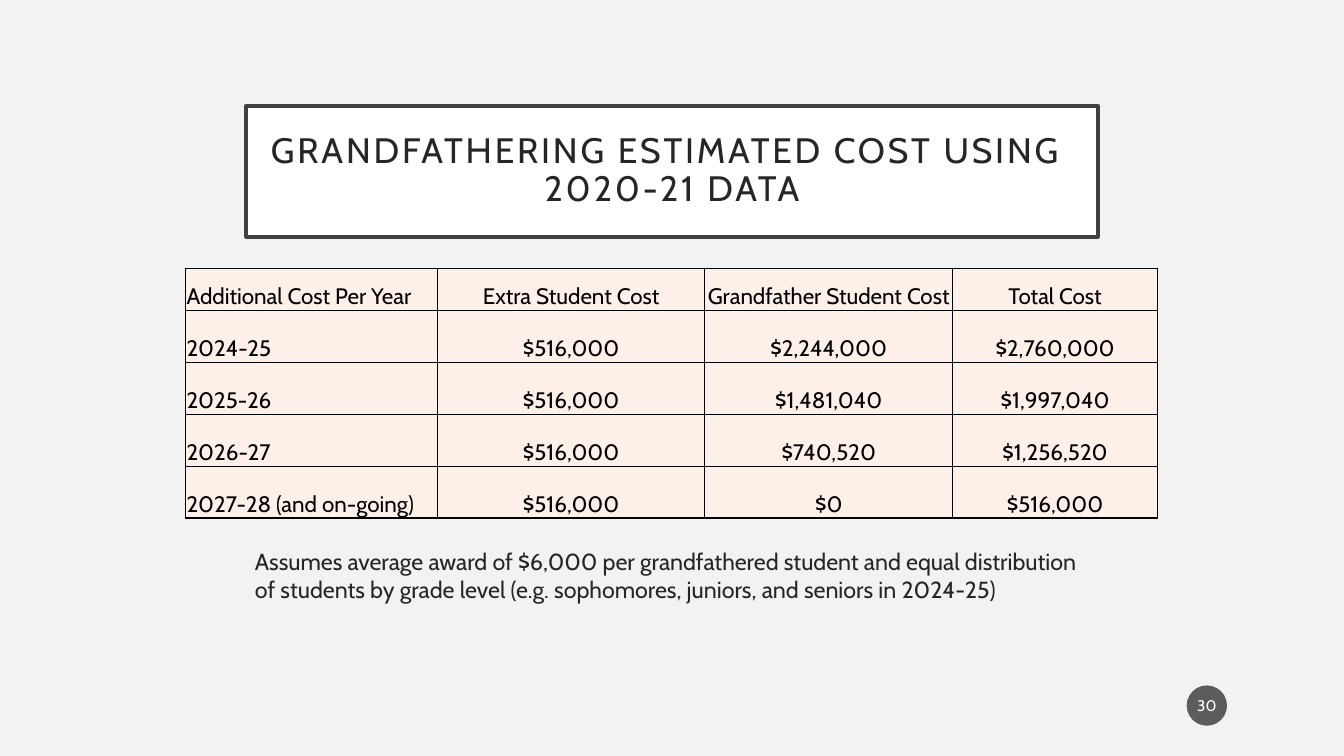
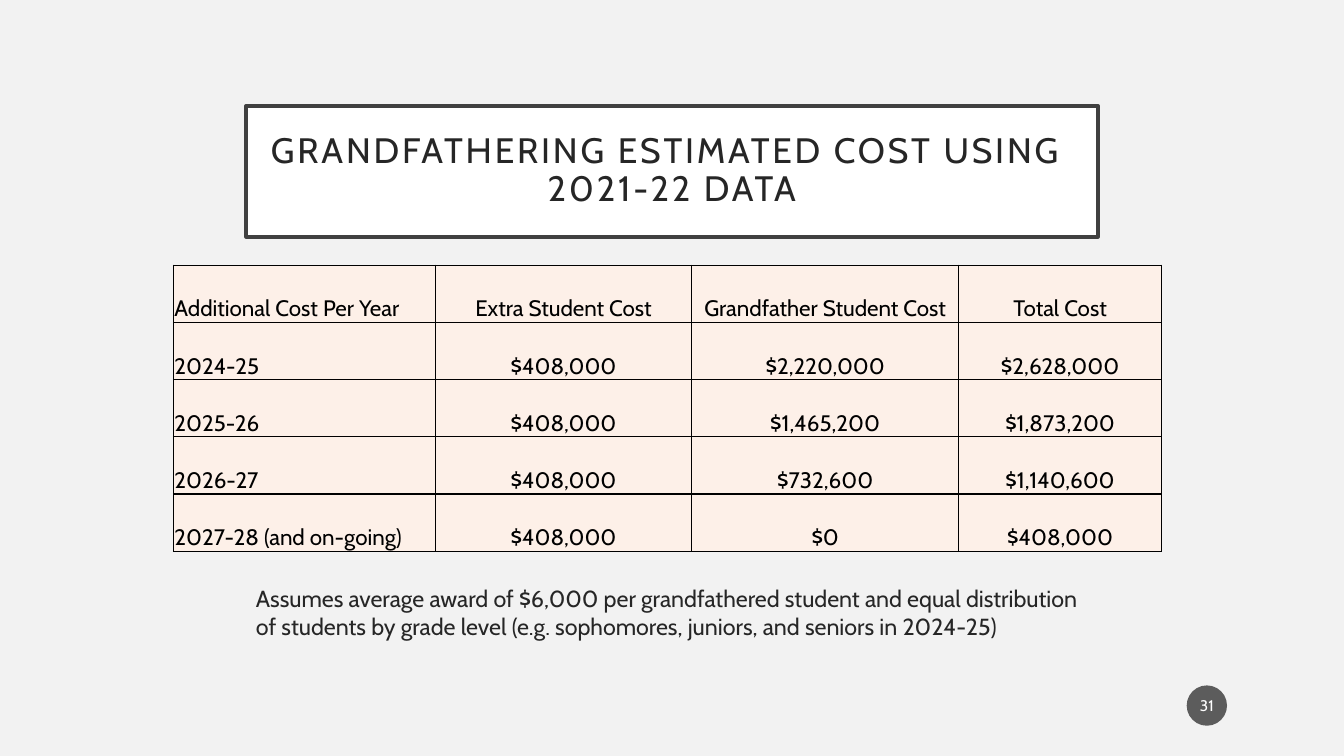
from dataclasses import dataclass

from lxml import etree
from pptx import Presentation
from pptx.dml.color import RGBColor
from pptx.enum.shapes import MSO_SHAPE
from pptx.enum.text import MSO_ANCHOR, PP_ALIGN
from pptx.oxml.ns import qn
from pptx.util import Inches, Pt

LEFT, CENTER = PP_ALIGN.LEFT, PP_ALIGN.CENTER
MIDDLE, BOTTOM = MSO_ANCHOR.MIDDLE, MSO_ANCHOR.BOTTOM
RECTANGLE, OVAL = MSO_SHAPE.RECTANGLE, MSO_SHAPE.OVAL


@dataclass(frozen=True)
class Theme:
    font: str = "Cabin"
    background: str = "F2F2F2"
    title_fill: str = "FFFFFF"
    title_line: str = "404040"
    text: str = "262626"
    cell_fill: str = "FDF0E8"
    cell_text: str = "000000"
    cell_border: str = "000000"
    badge_fill: str = "1D1D1D"
    badge_text: str = "FFFFFF"
    badge_opacity: int = 70
    title_size: float = 25.2
    note_size: float = 16.6
    cell_size: float = 16
    badge_size: float = 11
    title_tracking: float = 2
    title_line_width: float = 2.5
    border_width: float = 1


THEME = Theme()

TITLE = "GRANDFATHERING ESTIMATED COST USING \v{} DATA"
NOTE = ("Assumes average award of $6,000 per grandfathered student and equal "
        "distribution of students by grade level (e.g. sophomores, juniors, "
        "and seniors in 2024-25)")
HEADERS = ("Additional Cost Per Year", "Extra Student Cost",
           "Grandfather Student Cost", "Total Cost")
YEARS = ("2024-25", "2025-26", "2026-27", "2027-28 (and on-going)")

TITLE_BOX = (2.44, 1.05, 8.45, 1.3)
BADGE_BOX = (11.77, 6.8, 0.4, 0.4)

ESTIMATES = [
    {
        "data_year": "2020-21", "page": 30,
        "extra_cost": 516000,
        "grandfather_costs": (2244000, 1481040, 740520, 0),
        "table_at": (1.84, 2.66), "table_height": 2.48, "header_height": 0.42,
        "columns": (2.5, 2.65, 2.46, 2.03),
        "note_box": (2.43, 5.38, 8.45, 0.84),
    },
    {
        "data_year": "2021-22", "page": 31,
        "extra_cost": 408000,
        "grandfather_costs": (2220000, 1465200, 732600, 0),
        "table_at": (1.72, 2.63), "table_height": 2.84, "header_height": 0.57,
        "columns": (2.6, 2.54, 2.65, 2.01),
        "note_box": (2.44, 5.75, 8.45, 0.82),
    },
]


def color(value):
    return RGBColor.from_string(value)


def inches(values):
    return [Inches(value) for value in values]


def paint(target, value):
    target.fill.solid()
    target.fill.fore_color.rgb = color(value)


def write(text_frame, text, size, text_color, alignment=LEFT):
    text_frame.text = text
    paragraph = text_frame.paragraphs[0]
    paragraph.alignment = alignment
    paragraph.font.name = THEME.font
    paragraph.font.size = Pt(size)
    paragraph.font.color.rgb = color(text_color)
    return paragraph


def set_margins(target, left, top, right, bottom):
    """Set the inner margins of a text frame or a table cell, in inches."""
    target.margin_left, target.margin_top = Inches(left), Inches(top)
    target.margin_right, target.margin_bottom = Inches(right), Inches(bottom)


def add_filled_shape(slide, kind, box, fill, margins):
    shape = slide.shapes.add_shape(kind, *inches(box))
    shape.shadow.inherit = False
    paint(shape, fill)
    shape.text_frame.word_wrap = True
    shape.text_frame.vertical_anchor = MIDDLE
    set_margins(shape.text_frame, *margins)
    return shape


def add_title(slide, text):
    shape = add_filled_shape(slide, RECTANGLE, TITLE_BOX, THEME.title_fill,
                             (0.2, 0.2, 0.2, 0.2))
    shape.line.color.rgb = color(THEME.title_line)
    shape.line.width = Pt(THEME.title_line_width)
    paragraph = write(shape.text_frame, text, THEME.title_size, THEME.text, CENTER)
    paragraph.line_spacing = 0.9
    for properties in paragraph._p.iter(qn("a:defRPr")):
        properties.set("spc", str(int(THEME.title_tracking * 100)))


def add_note(slide, box):
    text_frame = slide.shapes.add_textbox(*inches(box)).text_frame
    text_frame.word_wrap = True
    paragraph = write(text_frame, NOTE, THEME.note_size, THEME.text)
    paragraph.space_before = Pt(10)


def add_page_badge(slide, page):
    shape = add_filled_shape(slide, OVAL, BADGE_BOX, THEME.badge_fill,
                             (0.02, 0.05, 0.02, 0.05))
    shape.line.fill.background()
    fill_color = shape._element.spPr.find(qn("a:solidFill"))[0]
    etree.SubElement(fill_color, qn("a:alpha"), val=str(THEME.badge_opacity * 1000))
    write(shape.text_frame, str(page), THEME.badge_size, THEME.badge_text, CENTER)


def add_borders(cell):
    properties = cell._tc.get_or_add_tcPr()
    for side in ("lnL", "lnR", "lnT", "lnB"):
        line = etree.SubElement(properties, qn(f"a:{side}"),
                                w=str(Pt(THEME.border_width)))
        fill = etree.SubElement(line, qn("a:solidFill"))
        etree.SubElement(fill, qn("a:srgbClr"), val=THEME.cell_border)


def cost_rows(estimate):
    """Return the header row and one row of formatted costs per year."""
    rows = [HEADERS]
    extra = estimate["extra_cost"]
    for year, grandfather in zip(YEARS, estimate["grandfather_costs"]):
        costs = (extra, grandfather, extra + grandfather)
        rows.append((year, *(f"${cost:,}" for cost in costs)))
    return rows


def add_cost_table(slide, estimate):
    rows = cost_rows(estimate)
    widths, height = estimate["columns"], estimate["table_height"]
    header_height = estimate["header_height"]
    row_height = (height - header_height) / len(YEARS)
    box = (*estimate["table_at"], sum(widths), height)
    table = slide.shapes.add_table(len(rows), len(widths), *inches(box)).table
    table.first_row = table.horz_banding = False
    for column, width in zip(table.columns, widths):
        column.width = Inches(width)
    for row_index, texts in enumerate(rows):
        table.rows[row_index].height = Inches(row_height if row_index else header_height)
        for column_index, text in enumerate(texts):
            cell = table.cell(row_index, column_index)
            add_borders(cell)
            paint(cell, THEME.cell_fill)
            cell.vertical_anchor = BOTTOM
            set_margins(cell, 0.01, 0.01, 0.01, 0)
            write(cell.text_frame, text, THEME.cell_size, THEME.cell_text,
                  CENTER if column_index else LEFT)


def add_estimate_slide(presentation, estimate):
    slide = presentation.slides.add_slide(presentation.slide_layouts[6])
    paint(slide.background, THEME.background)
    add_title(slide, TITLE.format(estimate["data_year"]))
    add_note(slide, estimate["note_box"])
    add_cost_table(slide, estimate)
    add_page_badge(slide, estimate["page"])


def main():
    presentation = Presentation()
    presentation.slide_width = Inches(13.33)
    presentation.slide_height = Inches(7.5)
    for estimate in ESTIMATES:
        add_estimate_slide(presentation, estimate)
    presentation.save("out.pptx")


if __name__ == "__main__":
    main()
